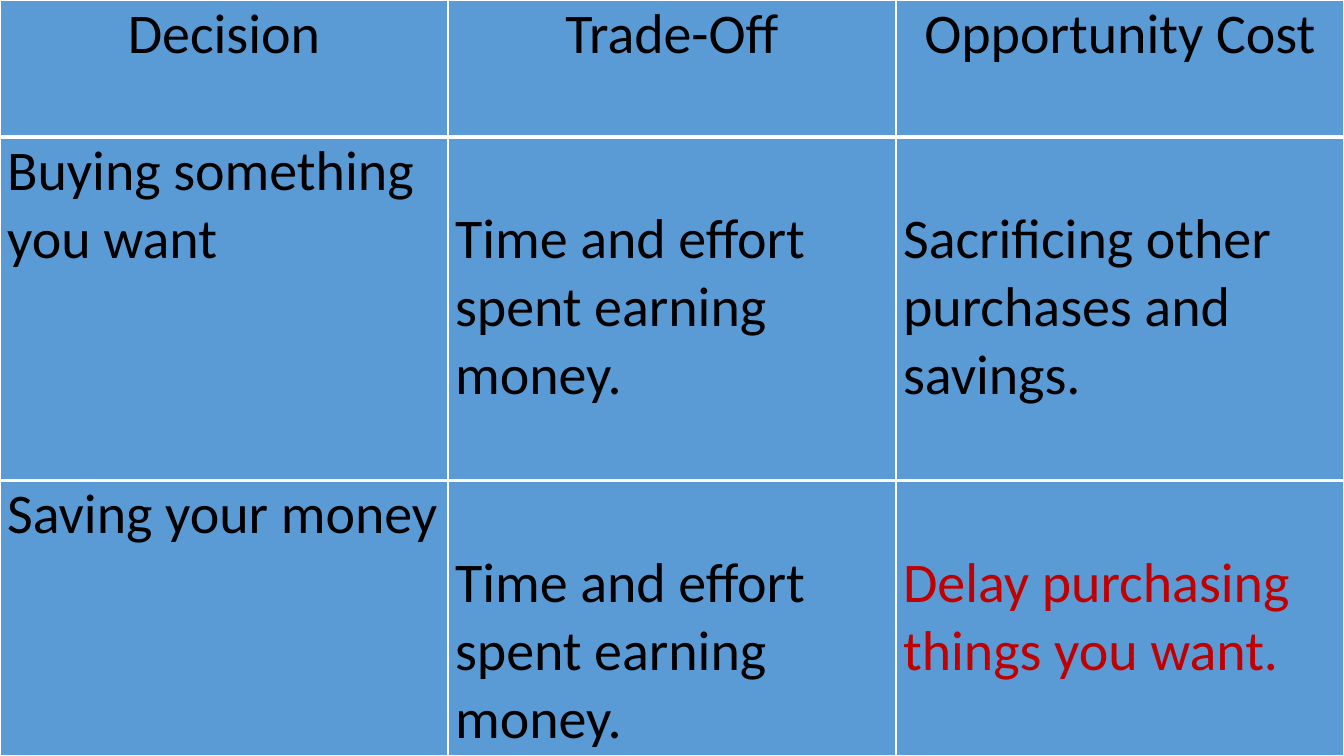
from lxml.etree import SubElement
from pptx import Presentation
from pptx.dml.color import RGBColor
from pptx.enum.text import MSO_ANCHOR, PP_ALIGN as Align
from pptx.oxml.ns import qn
from pptx.util import Cm, Pt


def color(value):
    return RGBColor.from_string(value)


class DecisionSlide:
    font, size = "Calibri", 40
    ink, accent, fill, rule = "000000", "C00000", "5B9BD5", "FFFFFF"
    inset = 0.18
    line_height = 1.72

    def __init__(self, prs):
        self.slide = prs.slides.add_slide(prs.slide_layouts[6])

    def table(self, widths, heights):
        frame = self.slide.shapes.add_table(
            len(heights), len(widths), 0, 0, Cm(sum(widths)), Cm(sum(heights)))
        table = frame.table
        table.first_row = table.horz_banding = False
        for column, width in zip(table.columns, widths):
            column.width = Cm(width)
        for row, height in zip(table.rows, heights):
            row.height = Cm(height)
        return table

    def borders(self, cell, top, bottom):
        tc_pr = cell._tc.get_or_add_tcPr()
        for side, width in (("L", 1), ("R", 1), ("T", top), ("B", bottom)):
            line = SubElement(tc_pr, qn(f"a:ln{side}"), w=str(Pt(width)))
            fill = SubElement(line, qn("a:solidFill"))
            SubElement(fill, qn("a:srgbClr"), val=self.rule)

    def cell(self, cell, text, ink, align, lines_down=0, top=1, bottom=1):
        self.borders(cell, top, bottom)
        cell.fill.solid()
        cell.fill.fore_color.rgb = color(self.fill)
        cell.margin_left = cell.margin_right = Cm(self.inset)
        cell.margin_top = Cm(lines_down * self.line_height)
        cell.margin_bottom = 0
        cell.vertical_anchor = MSO_ANCHOR.TOP
        p = cell.text_frame.paragraphs[0]
        p.alignment = align
        r = p.add_run()
        r.text = text
        r.font.name, r.font.size, r.font.bold = self.font, Pt(self.size), False
        r.font.color.rgb = color(ink)


def main():
    prs = Presentation()
    prs.slide_width, prs.slide_height = Cm(33.87), Cm(19.05)
    s = DecisionSlide(prs)

    # Content
    rows = [
        ["Decision", "Trade-Off", "Opportunity Cost"],
        ["Buying something you want", "Time and effort spent earning money.",
         "Sacrificing other purchases and savings."],
        ["Saving your money", "Time and effort spent earning money.",
         "Delay purchasing things you want."],
    ]
    row_borders = [(1, 3), (1, 1), (3, 1)]

    # Table filling the slide; answers start one line below their decision
    table = s.table([11.29] * 3, [3.45, 8.66, 6.94])
    for i, (texts, (top, bottom)) in enumerate(zip(rows, row_borders)):
        for j, text in enumerate(texts):
            s.cell(table.cell(i, j), text,
                   ink=s.accent if (i, j) == (2, 2) else s.ink,
                   align=Align.LEFT if i else Align.CENTER,
                   lines_down=1 if i and j else 0, top=top, bottom=bottom)

    prs.save("out.pptx")


if __name__ == "__main__":
    main()
